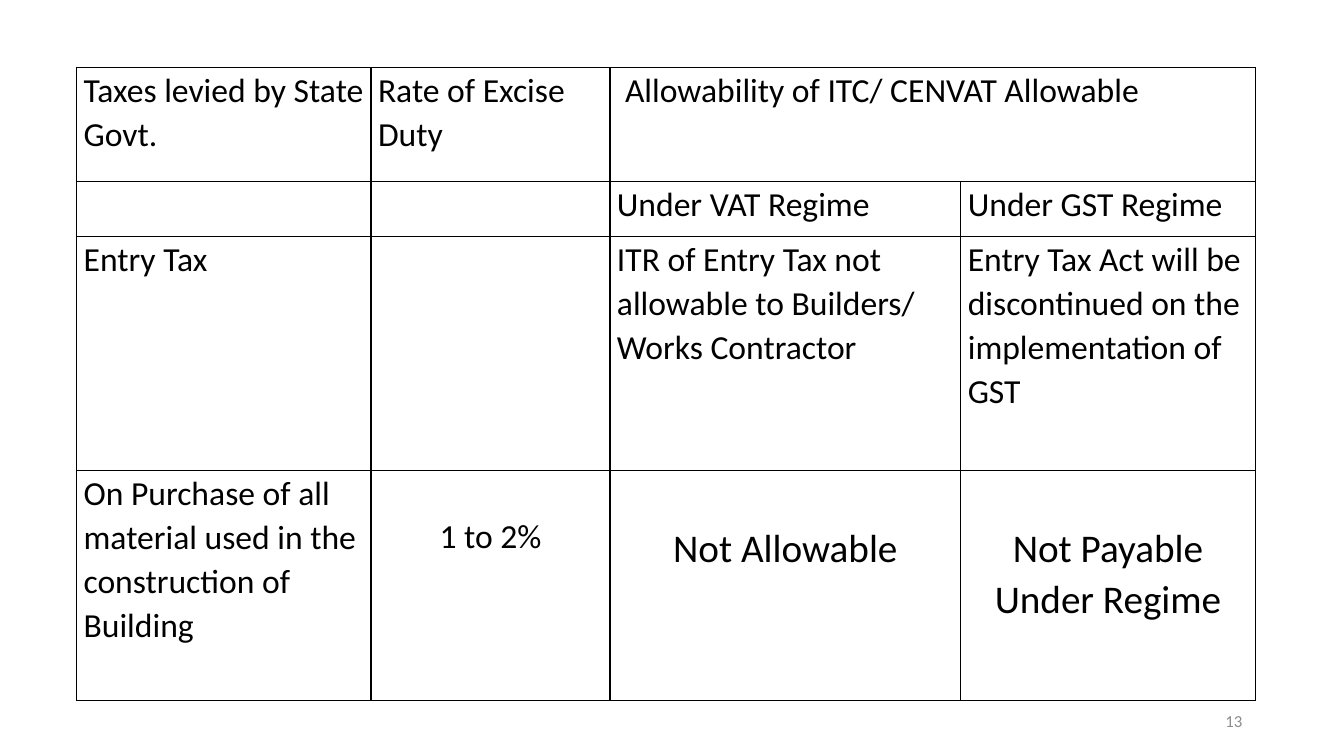
from lxml import etree
from pptx import Presentation
from pptx.dml.color import RGBColor
from pptx.enum.text import MSO_ANCHOR, PP_ALIGN
from pptx.oxml.ns import qn
from pptx.util import Inches, Pt

LEFT, CENTER, RIGHT = PP_ALIGN.LEFT, PP_ALIGN.CENTER, PP_ALIGN.RIGHT
MIDDLE = MSO_ANCHOR.MIDDLE
COLORS = {"ink": "000000", "paper": "FFFFFF", "number": "8C8C8C"}
COLUMN_WIDTHS = [2.92, 2.37, 3.48, 2.92]
ROW_HEIGHTS = [1.13, 0.55, 2.32, 2.28]
TAX_ROWS = [
    ["Taxes levied by State Govt.", "Rate of Excise Duty",
     "Allowability of ITC/ CENVAT Allowable", ""],
    ["", "", "Under VAT Regime", "Under GST Regime"],
    ["Entry Tax", "",
     "ITR of Entry Tax not allowable to Builders/ Works Contractor",
     "Entry Tax Act will be discontinued on the implementation of GST"],
    ["On Purchase of all material used in the construction of Building",
     "1 to 2%", "Not Allowable", "Not Payable Under Regime"],
]


class SlideBuilder:
    font = "Calibri"
    line_spacing = 1.07

    def __init__(self, presentation):
        self.slide = presentation.slides.add_slide(presentation.slide_layouts[6])
        background = self.slide.background.fill
        background.solid()
        background.fore_color.rgb = RGBColor.from_string(COLORS["paper"])

    def fill_paragraph(self, paragraph, text, size, color, align):
        paragraph.alignment = align
        paragraph.font.size = Pt(size)
        if text:
            run = paragraph.add_run()
            run.text = text
            run.font.name = self.font
            run.font.size = Pt(size)
            run.font.color.rgb = RGBColor.from_string(COLORS[color])

    def borders(self, cell):
        properties = cell._tc.get_or_add_tcPr()
        for side in ("lnL", "lnR", "lnT", "lnB"):
            line = etree.SubElement(properties, qn(f"a:{side}"), w=str(Pt(1)))
            fill = etree.SubElement(line, qn("a:solidFill"))
            etree.SubElement(fill, qn("a:srgbClr"), val=COLORS["ink"])

    def cell(self, cell, text, size=24, align=LEFT, top=0, left=0.07):
        cell.margin_left, cell.margin_right = Inches(left), Inches(0.07)
        cell.margin_top, cell.margin_bottom = Inches(top), Inches(0)
        self.borders(cell)
        cell.fill.background()
        paragraph = cell.text_frame.paragraphs[0]
        paragraph.line_spacing = self.line_spacing
        self.fill_paragraph(paragraph, text, size, "ink", align)

    def table(self, left, top, widths, heights):
        frame = self.slide.shapes.add_table(
            len(heights), len(widths), Inches(left), Inches(top),
            Inches(sum(widths)), Inches(sum(heights)))
        table = frame.table
        table.first_row = table.horz_banding = False
        for column, width in zip(table.columns, widths):
            column.width = Inches(width)
        for row, height in zip(table.rows, heights):
            row.height = Inches(height)
        return table

    def text(self, left, top, width, height, text, size, color, align):
        box = self.slide.shapes.add_textbox(
            Inches(left), Inches(top), Inches(width), Inches(height))
        box.text_frame.word_wrap = True
        box.text_frame.vertical_anchor = MIDDLE
        self.fill_paragraph(box.text_frame.paragraphs[0], text, size, color, align)


def main():
    presentation = Presentation()
    presentation.slide_width = Inches(13.33)
    presentation.slide_height = Inches(7.5)
    builder = SlideBuilder(presentation)

    table = builder.table(0.76, 0.67, COLUMN_WIDTHS, ROW_HEIGHTS)
    table.cell(0, 2).merge(table.cell(0, 3))
    rate = {"align": CENTER, "top": 0.43}
    verdict = {"align": CENTER, "top": 0.51, "size": 28}
    styles = {(0, 2): {"left": 0.15}, (3, 1): rate, (3, 2): verdict, (3, 3): verdict}
    for row, texts in enumerate(TAX_ROWS):
        for column, text in enumerate(texts):
            builder.cell(table.cell(row, column), text, **styles.get((row, column), {}))

    builder.text(9.42, 6.95, 3, 0.4, "13", 12, "number", RIGHT)
    presentation.save("out.pptx")


if __name__ == "__main__":
    main()
